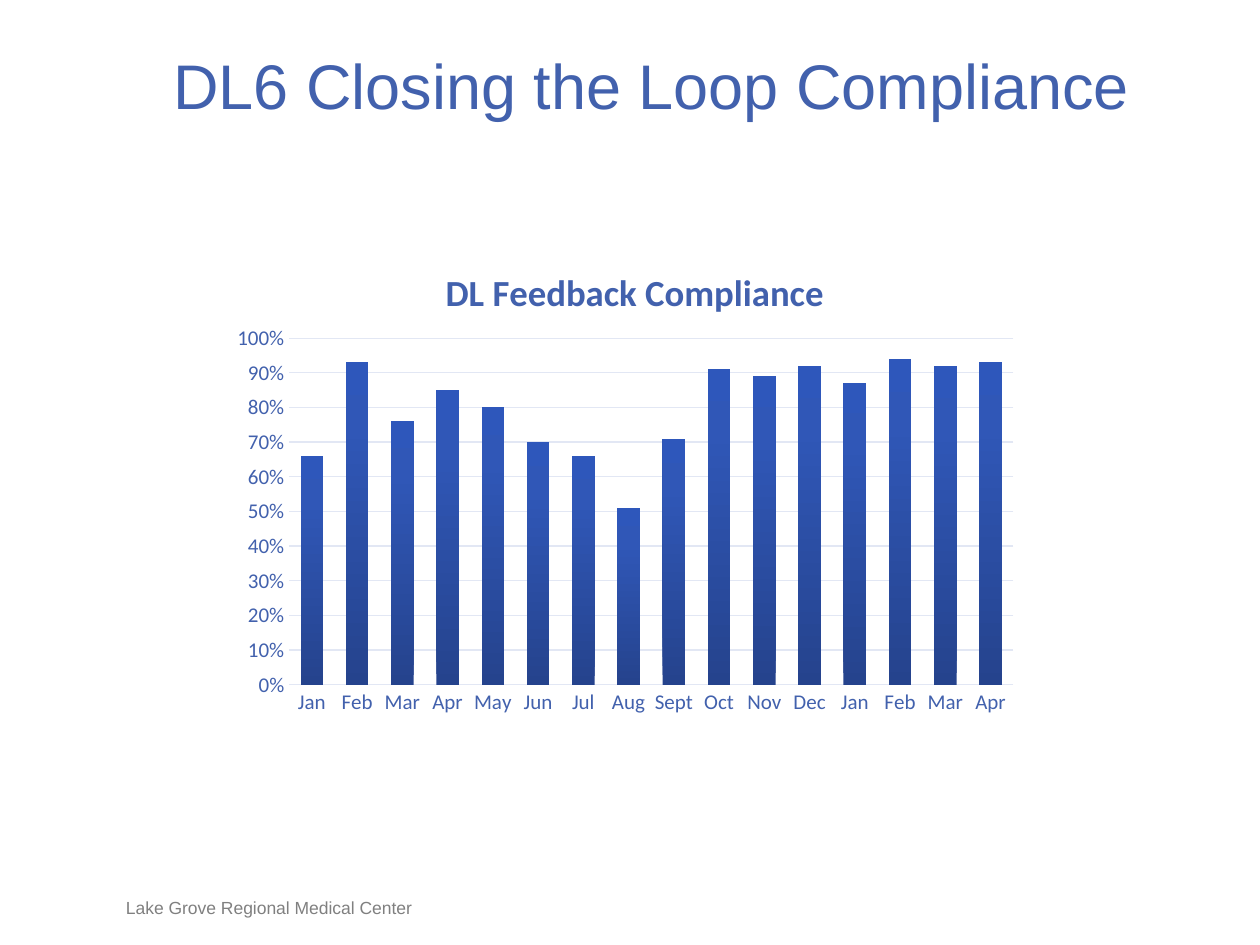
from dataclasses import dataclass

from lxml import etree
from pptx import Presentation
from pptx.chart.data import CategoryChartData
from pptx.dml.color import RGBColor
from pptx.enum.chart import XL_CHART_TYPE, XL_TICK_MARK
from pptx.enum.text import MSO_ANCHOR, PP_ALIGN
from pptx.oxml import parse_xml
from pptx.oxml.ns import nsdecls, qn
from pptx.util import Pt

COLUMN = XL_CHART_TYPE.COLUMN_CLUSTERED
NO_TICK = XL_TICK_MARK.NONE
BOTTOM = MSO_ANCHOR.BOTTOM
LEFT, CENTER = PP_ALIGN.LEFT, PP_ALIGN.CENTER
EMU_PER_PX = 9144


@dataclass(frozen=True)
class Theme:
    blue: str = "4261AD"
    gray: str = "808080"
    grid: str = "E2E7F4"
    bar_stops: tuple = ((0, "25438D"), (80, "3057B7"), (100, "2E57BB"))
    font: str = "Arial"
    chart_font: str = "Calibri"
    title_size: int = 36
    chart_title_size: int = 21
    axis_size: int = 12
    footer_size: int = 10


THEME = Theme()
MONTHS = ["Jan", "Feb", "Mar", "Apr", "May", "Jun", "Jul", "Aug",
          "Sept", "Oct", "Nov", "Dec", "Jan", "Feb", "Mar", "Apr"]
COMPLIANCE = [0.66, 0.93, 0.76, 0.85, 0.8, 0.7, 0.66, 0.51,
              0.71, 0.91, 0.89, 0.92, 0.87, 0.94, 0.92, 0.93]


def px(*values):
    return [v * EMU_PER_PX for v in values]


def style_font(font, name, size, color, bold=False):
    font.name, font.size, font.bold = name, Pt(size), bold
    font.color.rgb = RGBColor.from_string(color)


def style_line(line, color):
    line.color.rgb = RGBColor.from_string(color)
    line.width = Pt(0.75)


def add_text(slide, text, box, size, color, align=LEFT):
    tf = slide.shapes.add_textbox(*px(*box)).text_frame
    tf.word_wrap = True
    tf.vertical_anchor = BOTTOM
    tf.margin_left = tf.margin_top = tf.margin_right = tf.margin_bottom = 0
    p = tf.paragraphs[0]
    p.alignment = align
    r = p.add_run()
    r.text = text
    style_font(r.font, THEME.font, size, color)


def set_layout(parent, after, **values):
    for old in parent.findall(qn("c:layout")):
        parent.remove(old)
    layout = etree.Element(qn("c:layout"))
    manual = etree.SubElement(layout, qn("c:manualLayout"))
    for tag, value in values.items():
        etree.SubElement(manual, qn(f"c:{tag}")).set("val", str(value))
    if after is None:
        parent.insert(0, layout)
    else:
        after.addnext(layout)


def fill_gradient(series, stops):
    gs = "".join(f'<a:gs pos="{pos * 1000}"><a:srgbClr val="{color}"/></a:gs>'
                 for pos, color in stops)
    sp_pr = series.format.fill._xPr
    sp_pr.insert(0, parse_xml(
        f'<a:gradFill {nsdecls("a")} rotWithShape="1"><a:gsLst>{gs}</a:gsLst>'
        '<a:lin ang="16200000" scaled="0"/></a:gradFill>'))


def style_axis(axis):
    axis.major_tick_mark = axis.minor_tick_mark = NO_TICK
    style_font(axis.tick_labels.font, THEME.chart_font, THEME.axis_size, THEME.blue)


def add_title(chart, text):
    tf = chart.chart_title.text_frame
    r = tf.paragraphs[0].add_run()
    r.text = text
    style_font(r.font, THEME.chart_font, THEME.chart_title_size, THEME.blue, bold=True)
    title = chart.chart_title._element
    set_layout(title, title.find(qn("c:tx")),
               xMode="edge", yMode="edge", x=0.27, y=0.06)
    chart.chart_title.include_in_layout = False


def add_column_chart(slide, title, box):
    data = CategoryChartData(number_format="0%")
    data.categories = [str(i) for i in range(len(MONTHS))]
    data = CategoryChartData(number_format="0%")
    for month in MONTHS:
        data.add_category(month)
    data.add_series("Series 1", COMPLIANCE)
    chart = slide.shapes.add_chart(COLUMN, *px(*box), data).chart
    chart.has_legend = False
    style_font(chart.font, THEME.chart_font, THEME.axis_size, THEME.blue)
    add_title(chart, title)

    plot = chart.plots[0]
    plot.gap_width, plot.overlap = 100, -24
    plot.vary_by_categories = False
    fill_gradient(plot.series[0], THEME.bar_stops)

    months, rate = chart.category_axis, chart.value_axis
    style_axis(months)
    style_line(months.format.line, THEME.grid)
    style_axis(rate)
    rate.format.line.fill.background()
    style_line(rate.major_gridlines.format.line, THEME.grid)
    rate.minimum_scale, rate.maximum_scale, rate.major_unit = 0, 1, 0.1
    rate.tick_labels.number_format = "0%"
    rate.tick_labels.number_format_is_linked = False

    area = chart._chartSpace.find(".//" + qn("c:plotArea"))
    set_layout(area, None, layoutTarget="inner", xMode="edge", yMode="edge",
               x=0.085, y=0.218, w=0.895, h=0.702)


def main():
    prs = Presentation()
    prs.slide_width, prs.slide_height = px(1000, 750)
    slide = prs.slides.add_slide(prs.slide_layouts[6])
    add_text(slide, "Lake Grove Regional Medical Center", (100, 712, 317, 17),
             THEME.footer_size, THEME.gray)
    add_text(slide, "DL6 Closing the Loop Compliance", (92, 36, 850, 61),
             THEME.title_size, THEME.blue, align=CENTER)
    add_column_chart(slide, "DL Feedback Compliance", (175, 183, 642, 392))
    prs.save("out.pptx")


if __name__ == "__main__":
    main()
